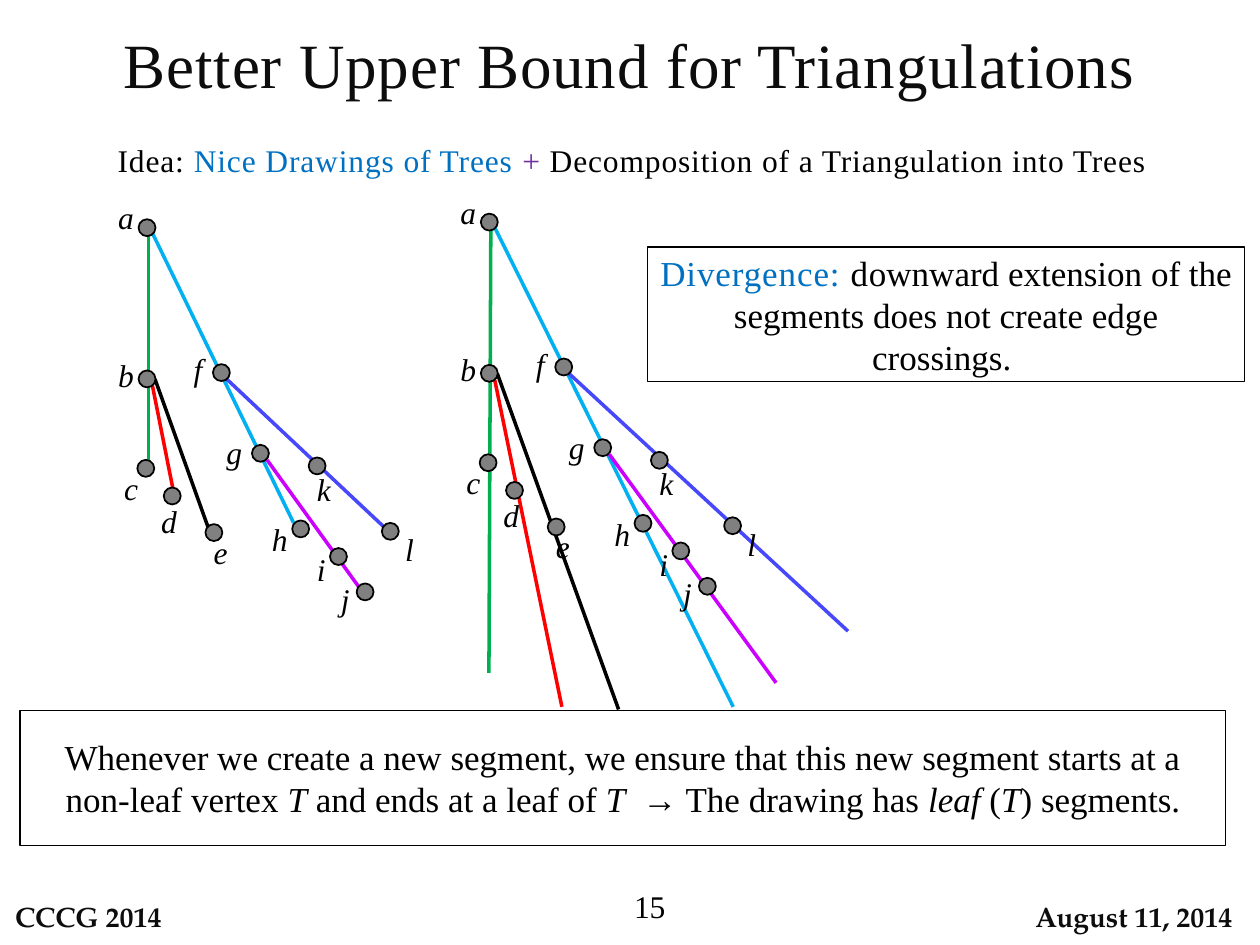
from dataclasses import dataclass
from typing import NamedTuple

from lxml.etree import SubElement
from pptx import Presentation
from pptx.dml.color import RGBColor
from pptx.enum.shapes import MSO_CONNECTOR, MSO_SHAPE
from pptx.enum.text import MSO_ANCHOR, MSO_AUTO_SIZE, PP_ALIGN
from pptx.oxml.ns import qn
from pptx.util import Pt

COLORS = {
    "black": "000000",
    "ink": "0D0D0D",
    "gray": "808080",
    "green": "00B050",
    "red": "FF0000",
    "cyan": "00B0F0",
    "magenta": "CC00FF",
    "indigo": "4747FB",
    "blue": "0070C0",
    "purple": "7030A0",
}
SERIF = "Times New Roman"
FOOTER_FONT = "TeX Gyre Pagella"
VERTEX_SIZE = 9.7
LABEL_WIDTH = 27.4


class Point(NamedTuple):
    x: float
    y: float


class Box(NamedTuple):
    left: float
    top: float
    width: float
    height: float


class Run(NamedTuple):
    text: str
    color: str = "black"
    italic: bool = False
    spacing: float = 0


@dataclass
class Segment:
    color: str
    start: Point
    leaf: Point
    extension: Point


@dataclass
class Vertex:
    name: str
    corner: Point
    label: Point
    label_height: float = 14.4


SEGMENTS = [
    Segment("green", Point(84.9, 128.9), Point(84.9, 265.7), Point(83.8, 387.7)),
    Segment("red", Point(87.1, 220.3), Point(99.4, 282.2), Point(125.5, 407.1)),
    Segment("black", Point(88.6, 216.7), Point(118.8, 301), Point(157.9, 408.6)),
    Segment("cyan", Point(87.1, 133.2), Point(167.8, 298.8), Point(223.4, 407.1)),
    Segment("magenta", Point(152.6, 262.8), Point(208.8, 340.6), Point(247.9, 393.4)),
    Segment("indigo", Point(129.6, 216.7), Point(224.6, 306), Point(289, 363.9)),
]

VERTICES = [
    Vertex("a", Point(79.2, 125.3), Point(58.3, 115.2), 18),
    Vertex("b", Point(79.2, 211.7), Point(58.3, 205.2), 18),
    Vertex("c", Point(78.5, 262.8), Point(61.2, 271.4)),
    Vertex("d", Point(93.6, 278.6), Point(82.8, 290.2)),
    Vertex("e", Point(117.4, 299.5), Point(112.3, 308.2)),
    Vertex("f", Point(121.7, 208.1), Point(99.4, 203.8)),
    Vertex("g", Point(144, 254.2), Point(120.2, 251.3)),
    Vertex("h", Point(167, 297.4), Point(146.2, 301)),
    Vertex("i", Point(188.6, 313.2), Point(169.9, 318.2)),
    Vertex("j", Point(203.8, 333.4), Point(183.6, 334.8)),
    Vertex("k", Point(176.4, 261.4), Point(171.4, 272.2)),
    Vertex("l", Point(218.2, 298.8), Point(220.3, 306.7)),
]


def rgb(name: str) -> RGBColor:
    return RGBColor.from_string(COLORS[name])


def in_points(values) -> list:
    return [Pt(value) for value in values]


def write_text(shape, runs: list[Run], *, size: float, font: str = SERIF,
               bold: bool = False, align=PP_ALIGN.CENTER,
               anchor=MSO_ANCHOR.MIDDLE, margin: float | None = None) -> None:
    frame = shape.text_frame
    frame.word_wrap = True
    frame.auto_size = MSO_AUTO_SIZE.NONE
    frame.vertical_anchor = anchor
    if margin is not None:
        frame.margin_left = frame.margin_right = Pt(margin)
        frame.margin_top = frame.margin_bottom = Pt(margin)
    paragraph = frame.paragraphs[0]
    paragraph.alignment = align
    for item in runs:
        run = paragraph.add_run()
        run.text = item.text
        run.font.name = font
        run.font.size = Pt(size)
        run.font.bold = bold
        run.font.italic = item.italic
        run.font.color.rgb = rgb(item.color)
        if item.spacing:
            run.font._element.set("spc", str(round(item.spacing * 100)))


def add_shape(shapes, kind, box: Box, *, fill: str | None = None,
              line_width: float = 0):
    shape = shapes.add_shape(kind, *in_points(box))
    shape.shadow.inherit = False
    if fill:
        shape.fill.solid()
        shape.fill.fore_color.rgb = rgb(fill)
    else:
        shape.fill.background()
    if line_width:
        shape.line.color.rgb = rgb("black")
        shape.line.width = Pt(line_width)
    else:
        shape.line.fill.background()
    return shape


def add_segment(shapes, start: Point, end: Point, color: str) -> None:
    connector = shapes.add_connector(MSO_CONNECTOR.STRAIGHT, *in_points(start + end))
    connector.line.color.rgb = rgb(color)
    connector.line.width = Pt(2)
    SubElement(connector._element.spPr, qn("a:effectLst"))


def draw_tree(slide, offset: Point, extended: bool) -> None:
    def moved(point: Point) -> Point:
        return Point(point.x + offset.x, point.y + offset.y)

    shapes = slide.shapes.add_group_shape().shapes
    for segment in SEGMENTS:
        end = segment.extension if extended else segment.leaf
        add_segment(shapes, moved(segment.start), moved(end), segment.color)
    for vertex in VERTICES:
        add_shape(shapes, MSO_SHAPE.OVAL,
                  Box(*moved(vertex.corner), VERTEX_SIZE, VERTEX_SIZE),
                  fill="gray", line_width=1)
        box = Box(*moved(vertex.label), LABEL_WIDTH, vertex.label_height)
        label = shapes.add_textbox(*in_points(box))
        write_text(label, [Run(vertex.name, italic=True)], size=18, margin=0)


def main() -> None:
    presentation = Presentation()
    presentation.slide_width, presentation.slide_height = Pt(720), Pt(540)
    slide = presentation.slides.add_slide(presentation.slide_layouts[5])
    shapes = slide.shapes

    title = shapes.title
    title.left, title.top, title.width, title.height = in_points(Box(0, 10.8, 720, 74.9))
    write_text(title, [Run("Better Upper Bound for Triangulations", "ink", spacing=0.5)],
               size=36, anchor=MSO_ANCHOR.TOP)

    for text, box, align in [
        ("CCCG 2014", Box(0, 507.6, 110.9, 32.4), PP_ALIGN.LEFT),
        ("August 11, 2014", Box(576, 507.6, 144, 32.4), PP_ALIGN.CENTER),
    ]:
        footer = add_shape(shapes, MSO_SHAPE.ROUNDED_RECTANGLE, box)
        write_text(footer, [Run(text, "ink")], size=16, font=FOOTER_FONT,
                   bold=True, align=align)

    number = shapes.add_textbox(*in_points(Box(219.6, 503.3, 167.8, 28.8)))
    write_text(number, [Run("15")], size=18, align=PP_ALIGN.RIGHT)

    claim = add_shape(shapes, MSO_SHAPE.RECTANGLE, Box(11.5, 406.1, 689, 77),
                      line_width=0.75)
    write_text(claim, [
        Run("Whenever we create a new segment, we ensure that this new segment "
            "starts at a non-leaf vertex "),
        Run("T", italic=True),
        Run(" and ends at a leaf of "),
        Run("T  ", italic=True),
        Run("→ The drawing has "),
        Run("leaf ", italic=True),
        Run("("),
        Run("T", italic=True),
        Run(") segments."),
    ], size=20)

    draw_tree(slide, Point(0, 0), extended=False)
    draw_tree(slide, Point(195.6, -3.2), extended=True)

    divergence = add_shape(shapes, MSO_SHAPE.RECTANGLE, Box(370.1, 141.1, 341.3, 77),
                           line_width=0.75)
    write_text(divergence, [
        Run("Divergence: ", "blue", spacing=0.5),
        Run("d", spacing=0.5),
        Run("ownward extension of the segments does not create edge crossings. "),
    ], size=20)

    idea = shapes.add_textbox(*in_points(Box(47.5, 77, 632.2, 28.8)))
    write_text(idea, [
        Run("Idea: ", spacing=0.5),
        Run("Nice Drawings of Trees ", "blue", spacing=0.5),
        Run("+ ", "purple", spacing=0.5),
        Run("Decomposition of a Triangulation into Trees ", spacing=0.5),
    ], size=18, anchor=MSO_ANCHOR.TOP)

    presentation.save("out.pptx")


if __name__ == "__main__":
    main()
